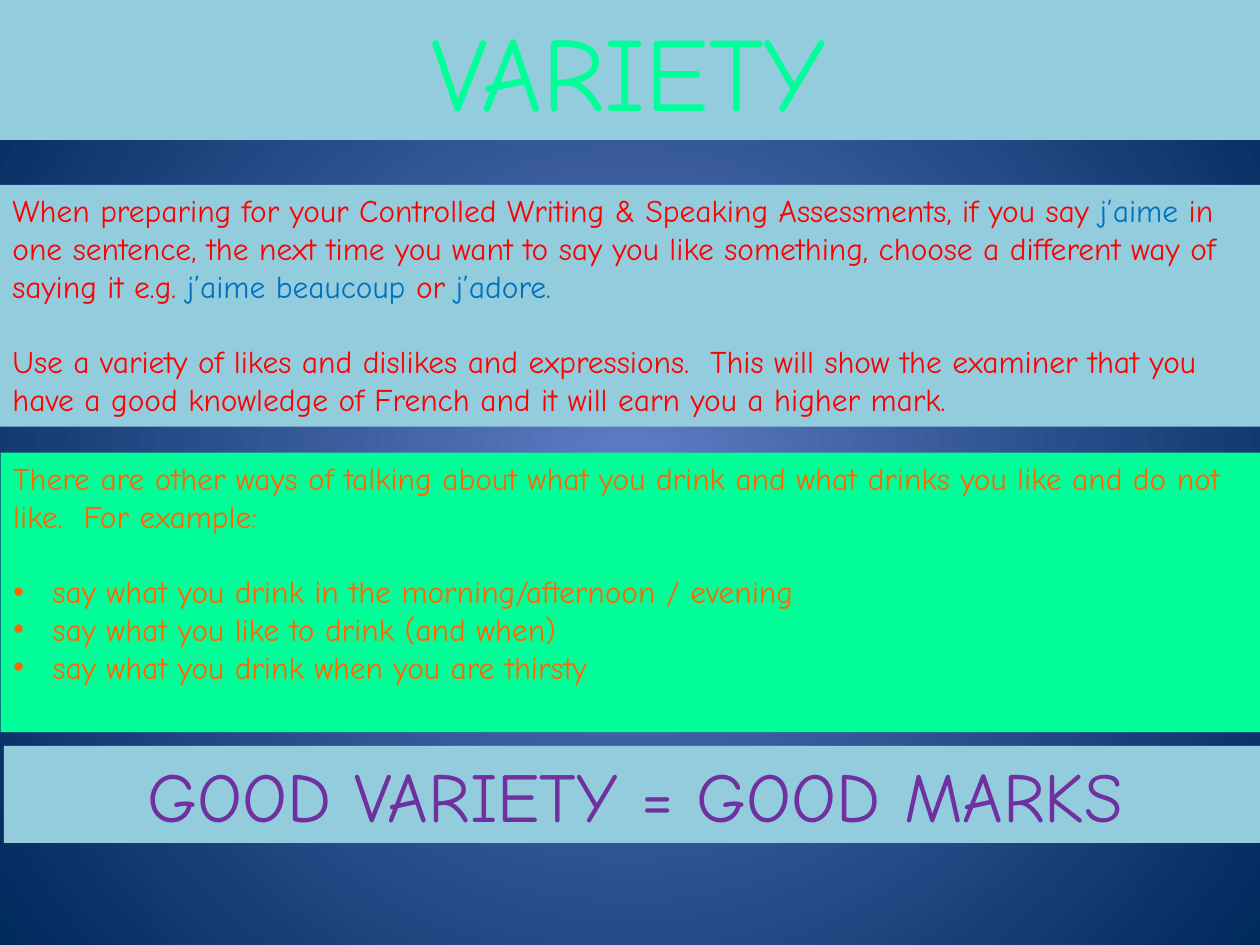
from lxml import etree
from pptx import Presentation
from pptx.dml.color import RGBColor
from pptx.enum.text import MSO_ANCHOR, MSO_AUTO_SIZE, PP_ALIGN
from pptx.oxml.ns import qn
from pptx.util import Pt

LEFT, CENTER = PP_ALIGN.LEFT, PP_ALIGN.CENTER
TOP = MSO_ANCHOR.TOP
FIXED = MSO_AUTO_SIZE.NONE

COLORS = {
    "glow": "5E7CC5", "night": "00295C", "sky": "93CDDD", "mint": "00FF99",
    "red": "FF0000", "blue": "0070C0", "purple": "7030A0", "orange": "FF6600",
}
FONT = "Comic Neue"
TITLE_SIZE, SLOGAN_SIZE, TEXT_SIZE = 60, 40, 18
BAND_WIDTH = 721.44
PARAGRAPH_GAP = 21.6
BULLET_INDENT = 22.5

ADVICE = [
    [
        ("When preparing for your Controlled Writing & Speaking Assessments, if you say ", "red"),
        ("j’aime ", "blue"),
        ("in one sentence, the next time you want to say you like something, "
         "choose a different way of saying it e.g. ", "red"),
        ("j’aime beaucoup ", "blue"),
        ("or ", "red"),
        ("j’adore.", "blue"),
    ],
    [
        ("Use a variety of likes and dislikes and expressions.  This will show the examiner "
         "that you have a good knowledge of French and it will earn you a higher mark.", "red"),
    ],
]
INTRO = ("There are other ways of talking about what you drink and what drinks "
         "you like and do not like.  For example:")
IDEAS = [
    "say what you drink in the morning/afternoon / evening",
    "say what you like to drink (and when)",
    "say what you drink when you are thirsty",
]


def color(name):
    return RGBColor.from_string(COLORS[name])


class Style:
    def __init__(self, page):
        self.page = page

    def background(self, center, edge):
        fill = self.page.background.fill
        fill.gradient()
        for stop, position, name in zip(fill.gradient_stops, (0, 1), (center, edge)):
            stop.position = position
            stop.color.rgb = color(name)
        gradient = next(self.page.element.iter(qn("a:gradFill")))
        gradient.remove(gradient.find(qn("a:lin")))
        path = etree.SubElement(gradient, qn("a:path"), path="circle")
        etree.SubElement(path, qn("a:fillToRect"), l="50000", t="50000", r="50000", b="50000")

    def band(self, box, left, top, height, fill):
        box.left, box.top = Pt(left), Pt(top)
        box.width, box.height = Pt(BAND_WIDTH), Pt(height)
        box.fill.solid()
        box.fill.fore_color.rgb = color(fill)
        frame = box.text_frame
        frame.word_wrap = True
        frame.auto_size = FIXED
        frame.vertical_anchor = TOP
        return frame

    def text_band(self, left, top, height, fill):
        box = self.page.shapes.add_textbox(0, 0, 0, 0)
        return self.band(box, left, top, height, fill)

    def paragraph(self, para, spans, size, align=LEFT, gap=0):
        para.alignment = align
        para.space_before = Pt(gap)
        for text, name in spans:
            span = para.add_run()
            span.text = text
            span.font.name = FONT
            span.font.size = Pt(size)
            span.font.color.rgb = color(name)

    def bullet(self, para, indent, char=None):
        properties = para._p.get_or_add_pPr()
        properties.set("marL", str(Pt(indent)))
        properties.set("indent", str(-Pt(indent)))
        if char:
            etree.SubElement(properties, qn("a:buChar"), char=char)
        else:
            etree.SubElement(properties, qn("a:buNone"))


def main():
    deck = Presentation()
    deck.slide_width, deck.slide_height = Pt(720), Pt(540)
    page = deck.slides.add_slide(deck.slide_layouts[1])
    style = Style(page)
    style.background("glow", "night")

    title = style.band(page.shapes.title, -1.44, 0, 79.92, "sky")
    style.paragraph(title.paragraphs[0], [("VARIETY", "mint")], TITLE_SIZE, CENTER)

    advice = style.text_band(0, 105.6, 138.24, "sky")
    for number, spans in enumerate(ADVICE):
        para = advice.add_paragraph() if number else advice.paragraphs[0]
        style.paragraph(para, spans, TEXT_SIZE, gap=PARAGRAPH_GAP if number else 0)

    ideas = style.band(page.placeholders[1], 0.36, 258.6, 159.84, "mint")
    intro = ideas.paragraphs[0]
    style.paragraph(intro, [(INTRO, "orange")], TEXT_SIZE)
    style.bullet(intro, 0)
    for number, idea in enumerate(IDEAS):
        para = ideas.add_paragraph()
        style.paragraph(para, [(idea, "orange")], TEXT_SIZE, gap=0 if number else PARAGRAPH_GAP)
        style.bullet(para, BULLET_INDENT, "•")

    slogan = style.text_band(2.16, 426.24, 55.44, "sky")
    style.paragraph(slogan.paragraphs[0], [("GOOD VARIETY = GOOD MARKS", "purple")],
                    SLOGAN_SIZE, CENTER)

    deck.save("out.pptx")


if __name__ == "__main__":
    main()
